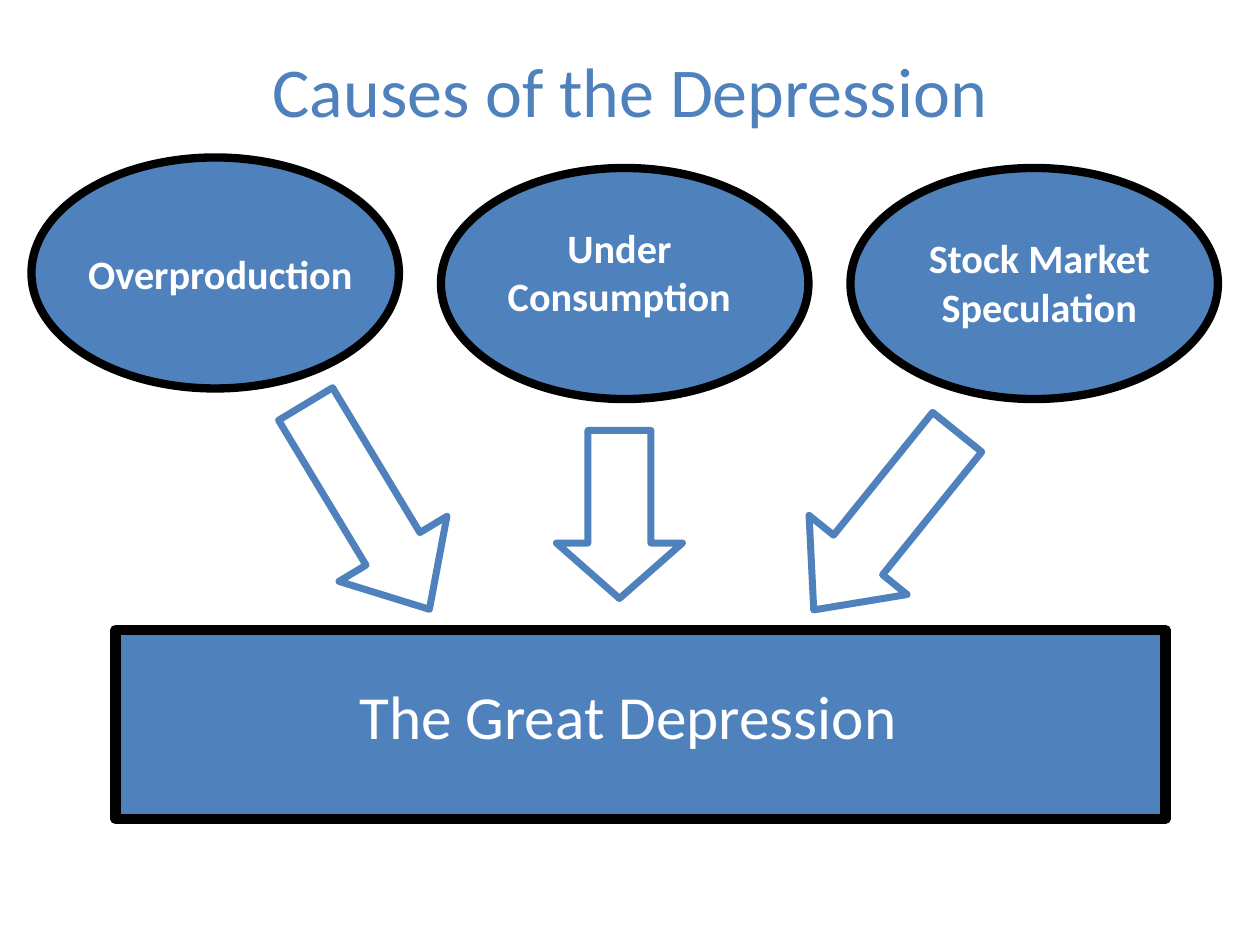
import pptx
import pptx.util
import pptx.dml.color
import pptx.enum.shapes
import pptx.enum.text

Pt = pptx.util.Pt
SHAPE = pptx.enum.shapes.MSO_SHAPE
BLUE, WHITE, BLACK = "4F81BD", "FFFFFF", "000000"


def write(shape, text, size, color, bold=False, anchor="TOP"):
    frame = shape.text_frame
    frame.word_wrap = True
    frame.vertical_anchor = pptx.enum.text.MSO_ANCHOR[anchor]
    paragraph = frame.paragraphs[0]
    paragraph.alignment = pptx.enum.text.PP_ALIGN.CENTER
    run = paragraph.add_run()
    run.text = text
    run.font.name = "Calibri"
    run.font.size = Pt(size)
    run.font.bold = bold
    run.font.color.rgb = pptx.dml.color.RGBColor.from_string(color)


def add_outlined(kind, left, top, width, height, fill, line, line_width):
    shape = slide.shapes.add_shape(kind, Pt(left), Pt(top), Pt(width), Pt(height))
    shape.shadow.inherit = False
    shape.fill.solid()
    shape.fill.fore_color.rgb = pptx.dml.color.RGBColor.from_string(fill)
    shape.line.color.rgb = pptx.dml.color.RGBColor.from_string(line)
    shape.line.width = Pt(line_width)
    return shape


presentation = pptx.Presentation()
presentation.slide_width, presentation.slide_height = Pt(720), Pt(540)
slide = presentation.slides.add_slide(presentation.slide_layouts[5])

title = slide.shapes.title
title.left, title.top, title.width, title.height = Pt(36), Pt(6), Pt(648), Pt(90)
write(title, "Causes of the Depression", size=40, color=BLUE, anchor="MIDDLE")

# Causes: ellipse left and top, label left, top and height
causes = [
    ("Overproduction", 18, 90, 30, 139, 35),
    ("Under Consumption", 252, 96, 258, 124, 63),
    ("Stock Market Speculation", 486, 96, 498, 130, 63),
]
for text, left, top, label_left, label_top, label_height in causes:
    add_outlined(SHAPE.OVAL, left, top, 210, 132, BLUE, BLACK, 4.75)
    label = slide.shapes.add_textbox(
        Pt(label_left), Pt(label_top), Pt(192), Pt(label_height))
    write(label, text, size=23, color=WHITE, bold=True)

# Arrows: left, top, height, rotation, head length relative to the width
arrows = [
    (174, 221, 137, 328.9, 0.56),
    (318, 246, 96, 0, 0.44),
    (470, 232.5, 130.5, 38.9, 0.56),
]
for left, top, height, rotation, head in arrows:
    arrow = add_outlined(SHAPE.DOWN_ARROW, left, top, 72, height, WHITE, BLUE, 4)
    arrow.rotation = rotation
    arrow.adjustments[0] = 0.5
    arrow.adjustments[1] = head

add_outlined(SHAPE.RECTANGLE, 66, 360, 600, 108, BLUE, BLACK, 6)
result_label = slide.shapes.add_textbox(Pt(78), Pt(384), Pt(570), Pt(49))
write(result_label, "The Great Depression ", size=35, color=WHITE)

presentation.save("out.pptx")
